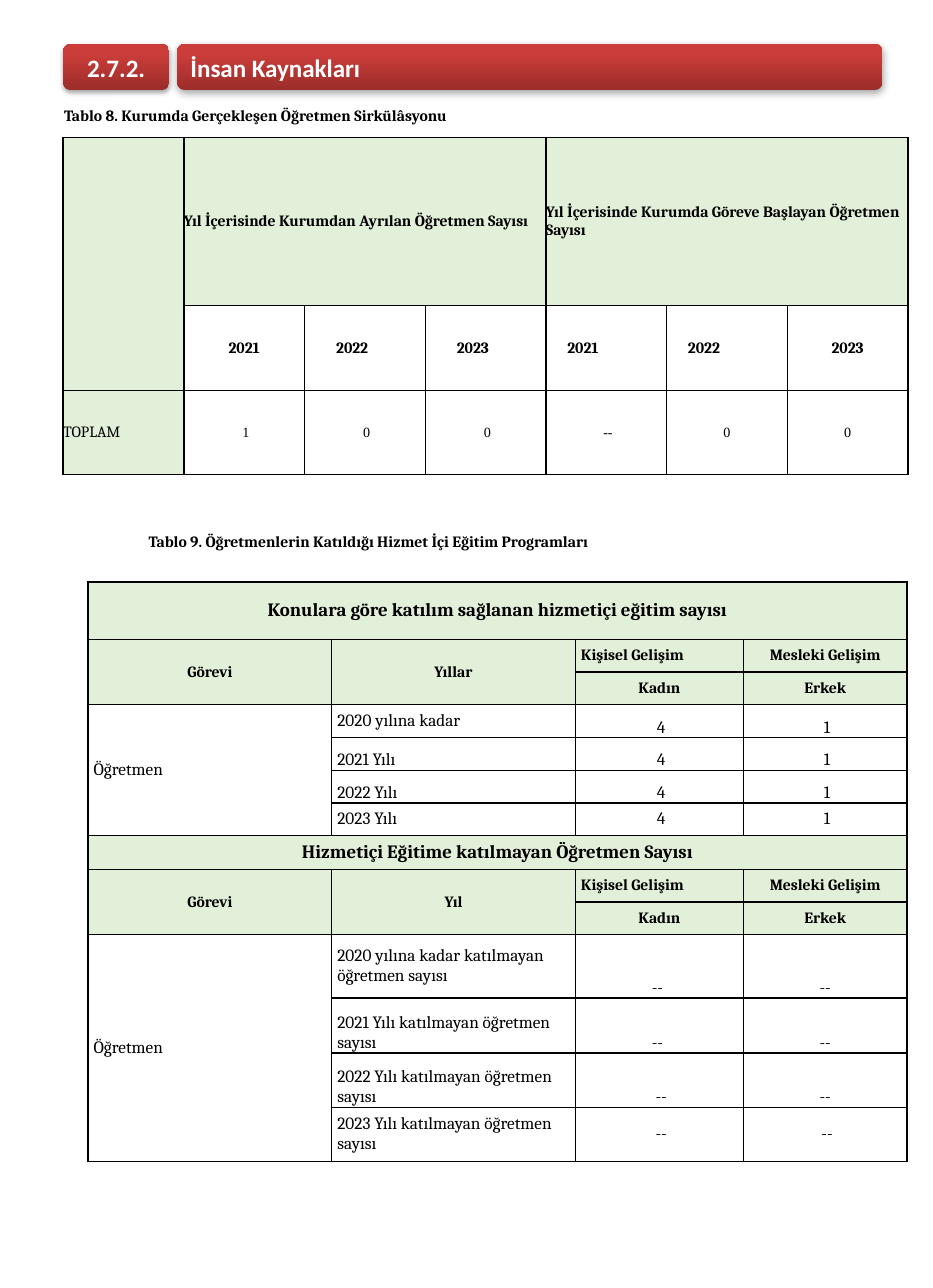
from lxml import etree
from pptx import Presentation
from pptx.dml.color import RGBColor
from pptx.enum.shapes import MSO_SHAPE
from pptx.enum.text import MSO_ANCHOR, PP_ALIGN
from pptx.oxml.ns import qn
from pptx.util import Inches, Pt

ROUNDED = MSO_SHAPE.ROUNDED_RECTANGLE
LEFT, CENTER = PP_ALIGN.LEFT, PP_ALIGN.CENTER
MIDDLE, BOTTOM = MSO_ANCHOR.MIDDLE, MSO_ANCHOR.BOTTOM

COLORS = {"black": "000000", "white": "FFFFFF", "green": "E2EFD9",
          "red": "CB3D3A", "dark red": "9B2D2A"}

BANNERS = [
    ("İnsan Kaynakları", 1.57, 6.25, LEFT, 5),
    ("2.7.2.", 0.56, 0.94, CENTER, 3.1),
]
CAPTIONS = [
    ("Tablo 8. Kurumda Gerçekleşen Öğretmen Sirkülâsyonu", -0.19, 0.89),
    ("Tablo 9. Öğretmenlerin Katıldığı Hizmet İçi Eğitim Programları", 0.56, 4.67),
]

TURNOVER_HEADS = ["Yıl İçerisinde Kurumdan Ayrılan Öğretmen Sayısı",
                  "Yıl İçerisinde Kurumda Göreve Başlayan Öğretmen Sayısı"]
TURNOVER = [
    ("2021", CENTER, 0, " 1"),
    ("2022", LEFT, 0.28, " 0"),
    ("2023", LEFT, 0.28, " 0"),
    ("2021", LEFT, 0.19, " --"),
    ("2022", LEFT, 0.19, "0"),
    ("2023", CENTER, 0, "0"),
]
TURNOVER_ROWS = [1.49, 0.75, 0.75]

TRAINING = [
    ("Konulara göre katılım sağlanan hizmetiçi eğitim sayısı", "Yıllar", [
        ("2020 yılına kadar", " 4", " 1"),
        ("2021 Yılı", " 4", " 1"),
        ("2022 Yılı", " 4", " 1"),
        ("2023 Yılı", " 4", " 1"),
    ]),
    ("Hizmetiçi Eğitime katılmayan Öğretmen Sayısı", "Yıl", [
        ("2020 yılına kadar katılmayan öğretmen sayısı", "-- ", "--"),
        ("2021 Yılı katılmayan öğretmen sayısı", "-- ", "--"),
        ("2022 Yılı katılmayan öğretmen sayısı", " --", "--"),
        ("2023 Yılı katılmayan öğretmen sayısı", " --", " --"),
    ]),
]
TRAINING_COLS = [2.16, 2.16, 1.49, 1.45]
TRAINING_ROWS = [0.51] + [0.29] * 6 + [0.3, 0.29, 0.29, 0.56, 0.49, 0.48, 0.48]
LABEL_ANCHORS = [MIDDLE, BOTTOM, BOTTOM, MIDDLE]
VALUE_ANCHORS = [BOTTOM, BOTTOM, BOTTOM, MIDDLE]


def rgb(name):
    return RGBColor.from_string(COLORS[name])


def style(p, size, bold=True, font="Cambria", color="black", align=LEFT):
    p.alignment = align
    p.font.name, p.font.size, p.font.bold = font, Pt(size), bold
    p.font.color.rgb = rgb(color)


def add_shadow(sp, blur):
    effects = etree.SubElement(sp._element.spPr, qn("a:effectLst"))
    shadow = etree.SubElement(effects, qn("a:outerShdw"), blurRad=str(Pt(blur)),
                              dist=str(Pt(1.8)), dir="5400000", rotWithShape="0")
    color = etree.SubElement(shadow, qn("a:srgbClr"), val=COLORS["black"])
    etree.SubElement(color, qn("a:alpha"), val="35000")


def add_banner(group, text, left, width, align, blur):
    sp = group.shapes.add_shape(ROUNDED, Inches(left), Inches(0.39),
                                Inches(width), Inches(0.41))
    sp.fill.gradient()
    sp.fill.gradient_angle = 90
    for stop, name, position in zip(sp.fill.gradient_stops, ("dark red", "red"), (0, 0.8)):
        stop.color.rgb = rgb(name)
        stop.position = position
    sp.line.fill.background()
    add_shadow(sp, blur)
    tf = sp.text_frame
    tf.vertical_anchor = MIDDLE
    tf.text = text
    style(tf.paragraphs[0], 16, font="Calibri", color="white", align=align)


def add_caption(slide, text, left, top):
    tf = slide.shapes.add_textbox(Inches(left), Inches(top),
                                  Inches(6.83), Inches(0.27)).text_frame
    tf.word_wrap = True
    tf.text = text
    p = tf.paragraphs[0]
    p._p.get_or_add_pPr().set("marL", str(Inches(0.66)))
    style(p, 10)


def add_grid(slide, left, top, cols, rows, inset):
    frame = slide.shapes.add_table(len(rows), len(cols), Inches(left), Inches(top),
                                   Inches(sum(cols)), Inches(sum(rows)))
    table = frame.table
    table.first_row = table.horz_banding = False
    for column, width in zip(table.columns, cols):
        column.width = Inches(width)
    for row, height in zip(table.rows, rows):
        row.height = Inches(height)
    for cell in table.iter_cells():
        cell.margin_left = cell.margin_right = Inches(inset)
        cell.margin_top = cell.margin_bottom = 0
        tcPr = cell._tc.get_or_add_tcPr()
        for side in ("a:lnL", "a:lnR", "a:lnT", "a:lnB"):
            line = etree.SubElement(tcPr, qn(side), w=str(Pt(1)))
            fill = etree.SubElement(line, qn("a:solidFill"))
            etree.SubElement(fill, qn("a:srgbClr"), val=COLORS["black"])
        cell.fill.background()
        style(cell.text_frame.paragraphs[0], 9)
    return table


def put(table, row, col, text, size=10, bold=True, align=CENTER, anchor=MIDDLE,
        green=False, span=(1, 1), font="Cambria"):
    cell = table.cell(row, col)
    if span != (1, 1):
        cell.merge(table.cell(row + span[0] - 1, col + span[1] - 1))
    cell.text = text
    cell.vertical_anchor = anchor
    if green:
        cell.fill.solid()
        cell.fill.fore_color.rgb = rgb("green")
    style(cell.text_frame.paragraphs[0], size, bold, font, align=align)
    return cell


def add_turnover(slide):
    table = add_grid(slide, 0.56, 1.22, [1.07] * 7, TURNOVER_ROWS, 0)
    put(table, 0, 0, "", green=True, span=(2, 1))
    for i, head in enumerate(TURNOVER_HEADS):
        put(table, 0, 1 + 3 * i, head, align=LEFT, green=True, span=(1, 3))
    put(table, 2, 0, "TOPLAM", bold=False, align=LEFT, green=True)
    for col, (year, align, indent, total) in enumerate(TURNOVER, 1):
        put(table, 1, col, year, align=align).margin_left = Inches(indent)
        put(table, 2, col, total, 9, False, font="Times New Roman")


def add_training(slide):
    table = add_grid(slide, 0.78, 5.16, TRAINING_COLS, TRAINING_ROWS, 0.05)
    for i, (title, period, years) in enumerate(TRAINING):
        top = 7 * i
        put(table, top, 0, title, 12, green=True, span=(1, 4))
        put(table, top + 1, 0, "Görevi", green=True, span=(2, 1))
        put(table, top + 1, 1, period, green=True, span=(2, 1))
        put(table, top + 1, 2, "Kişisel Gelişim", align=LEFT, green=True)
        put(table, top + 1, 3, "Mesleki Gelişim", green=True)
        put(table, top + 2, 2, "Kadın", green=True)
        put(table, top + 2, 3, "Erkek", green=True)
        put(table, top + 3, 0, "Öğretmen", 11, False, LEFT, span=(4, 1))
        for j, (label, *values) in enumerate(years):
            row = top + 3 + j
            put(table, row, 1, label, 11, False, LEFT, LABEL_ANCHORS[j])
            for col, value in enumerate(values, 2):
                put(table, row, col, value, 11, False, anchor=VALUE_ANCHORS[j])


def main():
    """Build the staff slide with its two tables."""
    prs = Presentation()
    prs.slide_width, prs.slide_height = Inches(8.27), Inches(11.42)
    slide = prs.slides.add_slide(prs.slide_layouts[6])
    group = slide.shapes.add_group_shape()
    for banner in BANNERS:
        add_banner(group, *banner)
    for caption in CAPTIONS:
        add_caption(slide, *caption)
    add_turnover(slide)
    add_training(slide)
    prs.save("out.pptx")


if __name__ == "__main__":
    main()
